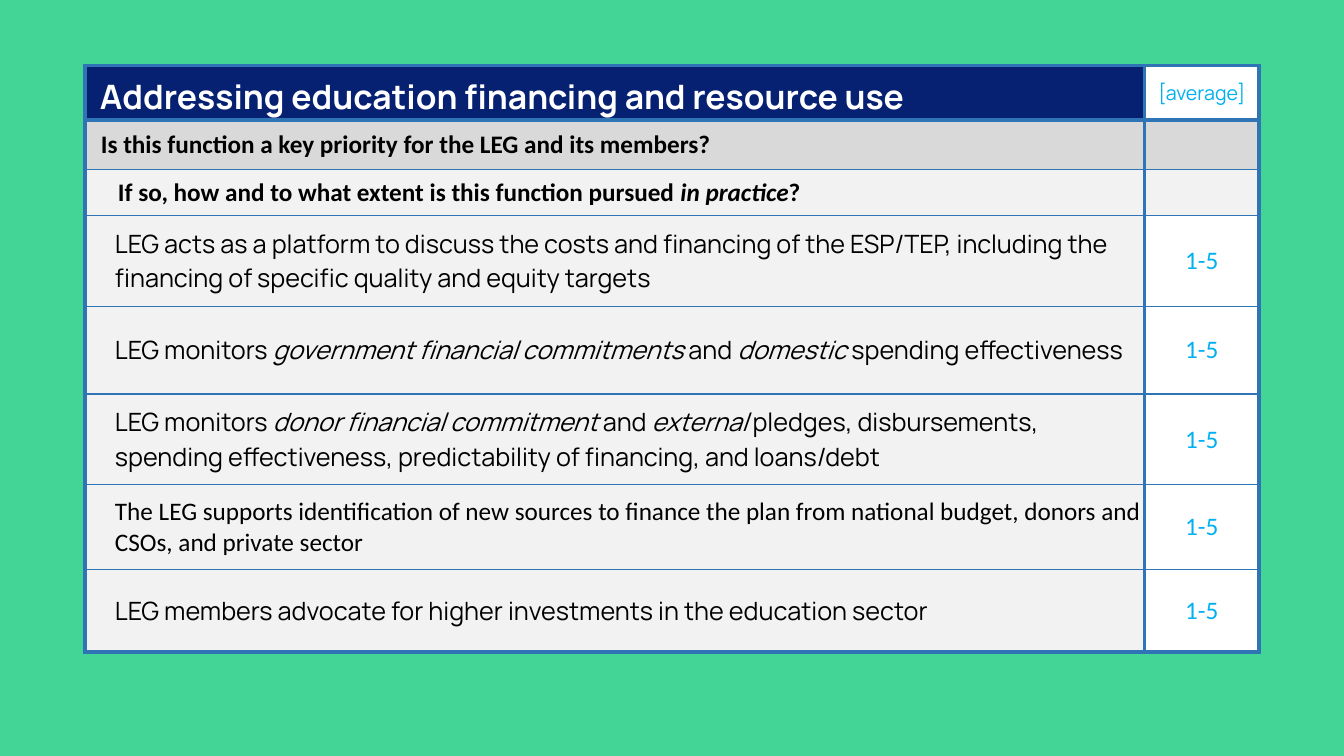
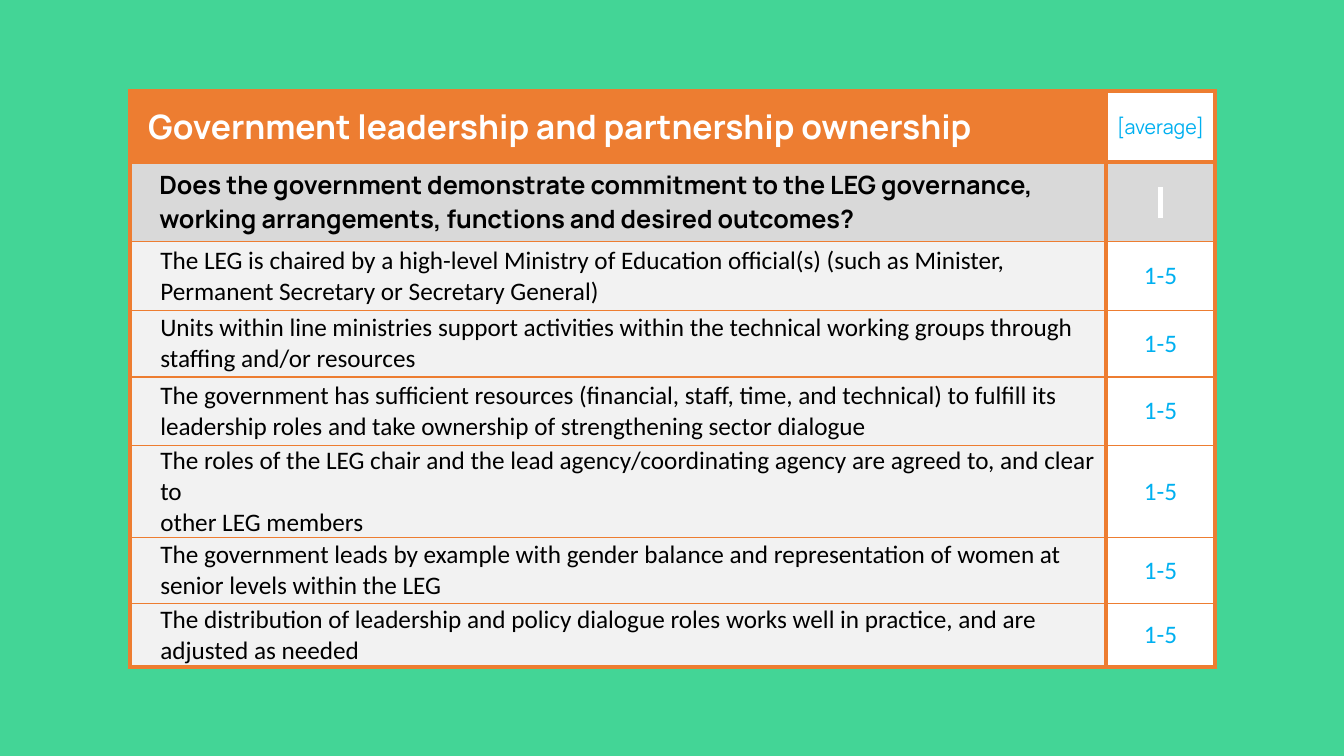
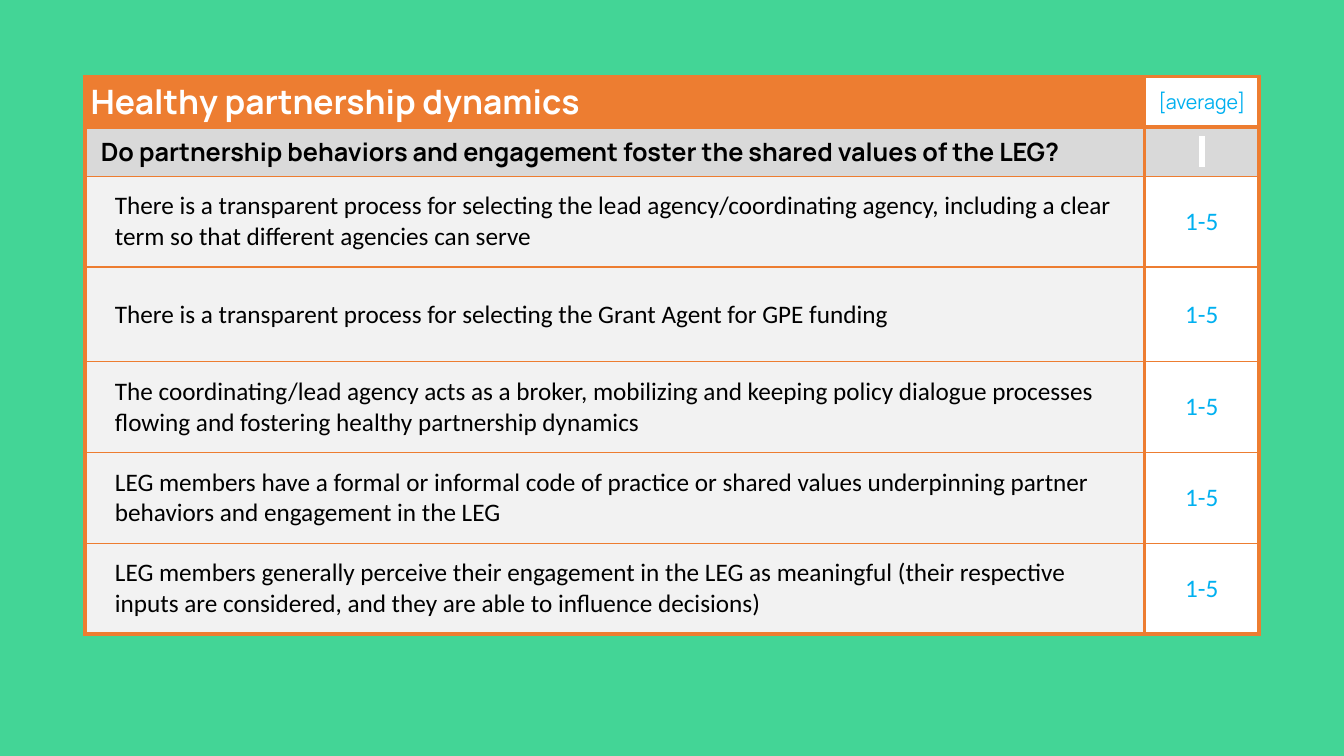
from pptx import Presentation, util as u
from pptx.dml.color import RGBColor
from pptx.enum import text as t
from pptx.oxml.ns import qn
from lxml import etree

# Theme
THEME = dict(back="43D596", blue="2F75B5", navy="062172", orange="ED7D31",
             white="FFFFFF", black="000000", sky="00B0F0",
             dark="D9D9D9", pale="F2F2F2",
             big=24, body=18, small=14, thick=3, thin=1)
SANS, GEO = "Calibri", "Manrope"
MID, LOW = t.MSO_ANCHOR.MIDDLE, t.MSO_ANCHOR.BOTTOM

# Row kinds: left fill, right fill, text colour, size, bold
KINDS = {
    "head": (None, "white", "white", "big", True),
    "ask": ("dark", "dark", "black", "body", True),
    "sub": ("pale", "pale", "black", "body", True),
    "item": ("pale", "white", "black", "body", False),
}
# Score column: text, font, size
SCORES = {"head": ("[average]", GEO, "small"), "item": ("1-5", SANS, "body")}
MARK = " "  # no-break space, drawn as a white highlight

# Content: kind, font, height, left inset, paragraphs (*italic*)
SLIDES = [
    dict(at=(0.84, 0.65), cols=(10.51, 1.14), edge="blue", band="navy",
         anchor=LOW, mark=False, rows=[
        ("head", GEO, 0.54, 0.15, ["Addressing education financing and resource use"]),
        ("ask", SANS, 0.49, 0.16, ["Is this function a key priority for the LEG and its members?"]),
        ("sub", SANS, 0.46, 0.33, ["If so, how and to what extent is this function pursued *in practice*?"]),
        ("item", GEO, 0.9, 0.3, ["LEG acts as a platform to discuss the costs and financing of the ESP/TEP, "
                                 "including the financing of specific quality and equity targets"]),
        ("item", GEO, 0.87, 0.3, ["LEG monitors *government financial commitments *and *domestic* "
                                  "spending effectiveness"]),
        ("item", GEO, 0.9, 0.3, ["LEG monitors *donor financial commitment *and *external* pledges, "
                                 "disbursements, spending effectiveness, predictability of financing, "
                                 "and loans/debt"]),
        ("item", SANS, 0.84, 0.3, ["The LEG supports identification of new sources to finance the plan "
                                   "from national budget, donors and CSOs, and private sector"]),
        ("item", GEO, 0.82, 0.3, ["LEG members advocate for higher investments in the education sector"]),
    ]),
    dict(at=(1.29, 0.9), cols=(9.68, 1.08), edge="orange", band="orange",
         anchor=MID, mark=True, rows=[
        ("head", GEO, 0.71, 0.18, ["Government leadership and partnership ownership"]),
        ("ask", GEO, 0.79, 0.29, ["Does the government demonstrate commitment to the LEG governance, "
                                  "working arrangements, functions and desired outcomes?"]),
        ("item", SANS, 0.68, 0.3, ["The LEG is chaired by a high-level Ministry of Education official(s) "
                                   "(such as Minister, Permanent Secretary or Secretary General)"]),
        ("item", SANS, 0.66, 0.3, ["Units within line ministries support activities within the technical "
                                   "working groups through staffing and/or resources"]),
        ("item", SANS, 0.68, 0.3, ["The government has sufficient resources (financial, staff, time, and "
                                   "technical) to fulfill its leadership roles and take ownership of "
                                   "strengthening sector dialogue"]),
        ("item", SANS, 0.79, 0.3, ["The roles of the LEG chair and the lead agency/coordinating agency are "
                                   "agreed to, and clear to", "other LEG members"]),
        ("item", SANS, 0.65, 0.3, ["The government leads by example with gender balance and representation "
                                   "of women at senior levels within the LEG"]),
        ("item", SANS, 0.63, 0.3, ["The distribution of leadership and policy dialogue roles works well in "
                                   "practice, and are adjusted as needed"]),
    ]),
    dict(at=(0.84, 0.76), cols=(10.51, 1.14), edge="orange", band="orange",
         anchor=MID, mark=True, rows=[
        ("head", GEO, 0.5, 0.06, ["Healthy partnership dynamics"]),
        ("ask", GEO, 0.49, 0.16, ["Do partnership behaviors and engagement foster the shared values "
                                  "of the LEG?"]),
        ("item", SANS, 0.9, 0.3, ["There is a transparent process for selecting the lead "
                                  "agency/coordinating agency, including a clear term so that different "
                                  "agencies can serve"]),
        ("item", SANS, 0.94, 0.3, ["There is a transparent process for selecting the Grant Agent for "
                                   "GPE funding"]),
        ("item", SANS, 0.9, 0.3, ["The coordinating/lead agency acts as a broker, mobilizing and keeping "
                                  "policy dialogue processes flowing and fostering healthy partnership "
                                  "dynamics"]),
        ("item", SANS, 0.9, 0.3, ["LEG members have a formal or informal code of practice or shared values "
                                  "underpinning partner behaviors and engagement in the LEG"]),
        ("item", SANS, 0.9, 0.3, ["LEG members generally perceive their engagement in the LEG as "
                                  "meaningful (their respective",
                                  "inputs are considered, and they are able to influence decisions)"]),
    ]),
]


def tint(name):
    return RGBColor.from_string(THEME[name])


def solid(node, name):
    fill = etree.SubElement(node, qn("a:solidFill"))
    etree.SubElement(fill, qn("a:srgbClr"), val=THEME[name])


def frame(cell, edge, top, base):
    """Draw the four borders; the sides are always thick."""
    props = cell._tc.get_or_add_tcPr()
    for side, size in zip("LRTB", ("thick", "thick", top, base)):
        line = etree.SubElement(props, qn("a:ln" + side), w=str(u.Pt(THEME[size])))
        solid(line, edge)


def paint(cell, name, anchor=MID, left=0):
    cell.fill.solid()
    cell.fill.fore_color.rgb = tint(name)
    cell.vertical_anchor = anchor
    cell.margin_left = u.Inches(left)
    cell.margin_right = cell.margin_top = cell.margin_bottom = 0


def write(cell, paras, font, size, color, bold=False, align=None, glow=None):
    frame_text = cell.text_frame
    for n, words in enumerate(paras):
        para = frame_text.add_paragraph() if n else frame_text.paragraphs[0]
        para.alignment = align
        for k, part in enumerate(words.split("*")):
            if not part:
                continue
            run = para.add_run()
            run.text = part
            face = run.font
            face.size, face.bold = u.Pt(THEME[size]), bold
            face.italic = k % 2 == 1
            face.color.rgb = tint(color)
            if glow:
                mark = etree.SubElement(run._r.get_or_add_rPr(), qn("a:highlight"))
                etree.SubElement(mark, qn("a:srgbClr"), val=THEME[glow])
            face.name = font


def grid(slide, page):
    """Lay out one score table."""
    rows, cols = page["rows"], page["cols"]
    size = [u.Inches(v) for v in (*page["at"], sum(cols), sum(r[2] for r in rows))]
    table = slide.shapes.add_table(len(rows), len(cols), *size).table
    table.first_row = table.horz_banding = False
    for col, wide in zip(table.columns, cols):
        col.width = u.Inches(wide)
    mid = t.PP_ALIGN.CENTER
    for n, (kind, font, high, left, paras) in enumerate(rows):
        table.rows[n].height = u.Inches(high)
        fill, side, color, size, bold = KINDS[kind]
        body, score = table.cell(n, 0), table.cell(n, 1)
        top = "thick" if n < 2 else "thin"
        base = "thick" if n in (0, len(rows) - 1) else "thin"
        for cell in (body, score):
            frame(cell, page["edge"], top, base)
        paint(body, fill or page["band"], page["anchor"] if kind == "head" else MID, left)
        paint(score, side)
        write(body, paras, font, size, color, bold)
        if kind in SCORES:
            words, face, small = SCORES[kind]
            write(score, [words], face, small, "sky", align=mid)
        elif page["mark"]:
            write(score, [MARK], SANS, "body", "sky", align=mid, glow="white")


def main():
    deck = Presentation()
    deck.slide_width, deck.slide_height = u.Inches(13.33), u.Inches(7.5)
    back = deck.slide_master.background.fill
    back.solid()
    back.fore_color.rgb = tint("back")
    for page in SLIDES:
        grid(deck.slides.add_slide(deck.slide_layouts[6]), page)
    deck.save("out.pptx")


if __name__ == "__main__":
    main()
